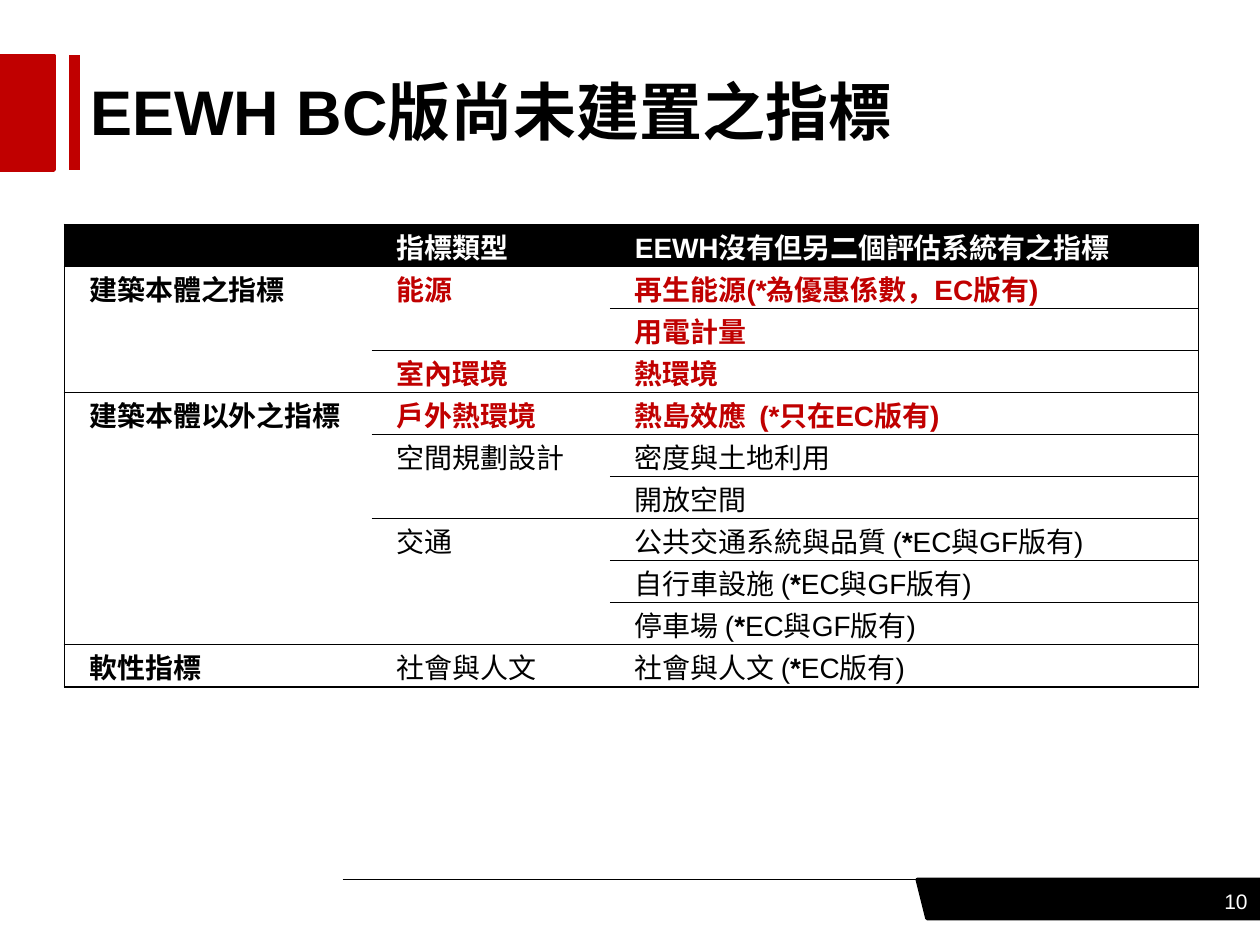
from lxml.etree import SubElement
from pptx import Presentation
from pptx.dml.color import RGBColor
from pptx.enum.shapes import MSO_CONNECTOR as Connector, MSO_SHAPE as Preset
from pptx.enum.text import MSO_ANCHOR as Anchor, PP_ALIGN as Align
from pptx.oxml.ns import qn
from pptx.util import Inches, Pt

COLORS = {"black": "000000", "red": "C00000", "white": "FFFFFF"}
FONTS = {
    "title": ({"size": Pt(36), "bold": True}, "black"),
    "page": ({"size": Pt(12), "bold": False}, "white"),
    "head": ({"size": Pt(16), "bold": True}, "white"),
    "label": ({"size": Pt(16), "bold": True}, "black"),
    "missing": ({"size": Pt(16), "bold": True}, "red"),
    "plain": ({"size": Pt(16), "bold": False}, "black"),
}
CELL_FORMAT = {
    "margin_left": Inches(0.06), "margin_right": Inches(0.06),
    "margin_top": 0, "margin_bottom": 0,
}
COLUMN_WIDTHS = [2.44, 1.89, 4.67]
ROW_HEIGHT = Pt(24)
INDICATORS = [
    [("建築本體之指標", 3, "label"), ("能源", 2, "missing"), ("再生能源(*為優惠係數，EC版有)", 1, "missing")],
    [None, None, ("用電計量", 1, "missing")],
    [None, ("室內環境", 1, "missing"), ("熱環境", 1, "missing")],
    [("建築本體以外之指標", 6, "label"), ("戶外熱環境", 1, "missing"), ("熱島效應  (*只在EC版有)", 1, "missing")],
    [None, ("空間規劃設計", 2, "plain"), ("密度與土地利用", 1, "plain")],
    [None, None, ("開放空間", 1, "plain")],
    [None, ("交通", 3, "plain"), ("公共交通系統與品質 (*EC與GF版有)", 1, "plain")],
    [None, None, ("自行車設施 (*EC與GF版有)", 1, "plain")],
    [None, None, ("停車場 (*EC與GF版有)", 1, "plain")],
    [("軟性指標", 1, "label"), ("社會與人文", 1, "plain"), ("社會與人文 (*EC版有)", 1, "plain")],
]
HEADINGS = [("", 1, "head"), ("指標類型", 1, "head"), ("EEWH沒有但另二個評估系統有之指標", 1, "head")]


def apply(target, values):
    for name, value in values.items():
        setattr(target, name, value)


class SlideBuilder:
    def __init__(self, slide, typeface="Arial"):
        self.shapes = slide.shapes
        self.typeface = typeface

    def color(self, name):
        return RGBColor.from_string(COLORS[name])

    def outline(self, shape, color, width):
        shape.line.color.rgb = self.color(color)
        shape.line.width = Pt(width)

    def block(self, preset, box, color):
        block = self.shapes.add_shape(preset, *map(Inches, box))
        block.shadow.inherit = False
        block.fill.solid()
        block.fill.fore_color.rgb = self.color(color)
        self.outline(block, color, 2)
        return block

    def line(self, ends, color, width):
        line = self.shapes.add_connector(Connector.STRAIGHT, *map(Inches, ends))
        self.outline(line, color, width)
        SubElement(line._element.spPr, qn("a:effectLst"))

    def run(self, paragraph, text, style, **changes):
        values, color = FONTS[style]
        run = paragraph.add_run()
        run.text = text
        apply(run.font, {"name": self.typeface, **values, **changes})
        run.font.color.rgb = self.color(color)

    def text(self, box, text, style, align=Align.LEFT):
        frame = self.shapes.add_textbox(*map(Inches, box)).text_frame
        apply(frame, {"word_wrap": True, "vertical_anchor": Anchor.MIDDLE})
        frame.paragraphs[0].alignment = align
        self.run(frame.paragraphs[0], text, style)

    def borders(self, cell, visible):
        properties = cell._tc.get_or_add_tcPr()
        for side in "LRTB":
            border = SubElement(properties, qn(f"a:ln{side}"), w=str(Pt(0.75)))
            if side in visible:
                fill = SubElement(border, qn("a:solidFill"))
                SubElement(fill, qn("a:srgbClr"), val=COLORS["black"])
            else:
                SubElement(border, qn("a:noFill"))

    def cell_text(self, cell, text, style):
        paragraph = cell.text_frame.paragraphs[0]
        paragraph.line_spacing = Pt(24)
        paragraph._p.get_or_add_pPr().set("indent", str(Inches(0.14)))
        before, star, after = text.partition("*")
        if style == "plain" and star:
            self.run(paragraph, before, style)
            self.run(paragraph, star, style, bold=True)
            self.run(paragraph, after, style)
        else:
            self.run(paragraph, text, style)

    def table(self, left, top, widths, rows):
        table = self.shapes.add_table(
            len(rows), len(widths), Inches(left), Inches(top),
            Inches(sum(widths)), ROW_HEIGHT * len(rows)).table
        apply(table, {"first_row": False, "horz_banding": False})
        for column, width in zip(table.columns, widths):
            column.width = Inches(width)
        for row_index, row in enumerate(rows):
            table.rows[row_index].height = ROW_HEIGHT
            for column_index, entry in enumerate(row):
                cell = table.cell(row_index, column_index)
                apply(cell, CELL_FORMAT)
                sides = {0: "L", len(widths) - 1: "R"}.get(column_index, "")
                if entry:
                    sides += "TB"
                elif row_index + 1 == len(rows) or rows[row_index + 1][column_index]:
                    sides += "B"
                self.borders(cell, sides)
                if row_index == 0:
                    cell.fill.solid()
                    cell.fill.fore_color.rgb = self.color("black")
                else:
                    cell.fill.background()
                if entry:
                    text, span, style = entry
                    self.cell_text(cell, text, style)
                    if span > 1:
                        cell.merge(table.cell(row_index + span - 1, column_index))


def main():
    deck = Presentation()
    apply(deck, {"slide_width": Inches(10), "slide_height": Inches(7.5)})
    builder = SlideBuilder(deck.slides.add_slide(deck.slide_layouts[6]))

    builder.line((2.72, 6.98, 10, 6.98), "black", 0.75)
    footer = builder.block(Preset.PARALLELOGRAM, (7.28, 6.98, 2.81, 0.31), "black")
    footer._element.spPr.xfrm.set("flipH", "1")
    builder.block(Preset.RECTANGLE, (0, 0.44, 0.43, 0.91), "red")
    builder.line((0.59, 0.44, 0.59, 1.35), "red", 6)
    builder.text((0.62, 0.44, 9, 0.87), "EEWH BC版尚未建置之指標", "title")
    builder.text((9.51, 6.95, 0.49, 0.4), "10", "page", Align.RIGHT)
    builder.table(0.51, 1.78, COLUMN_WIDTHS, [HEADINGS, *INDICATORS])

    deck.save("out.pptx")


if __name__ == "__main__":
    main()
